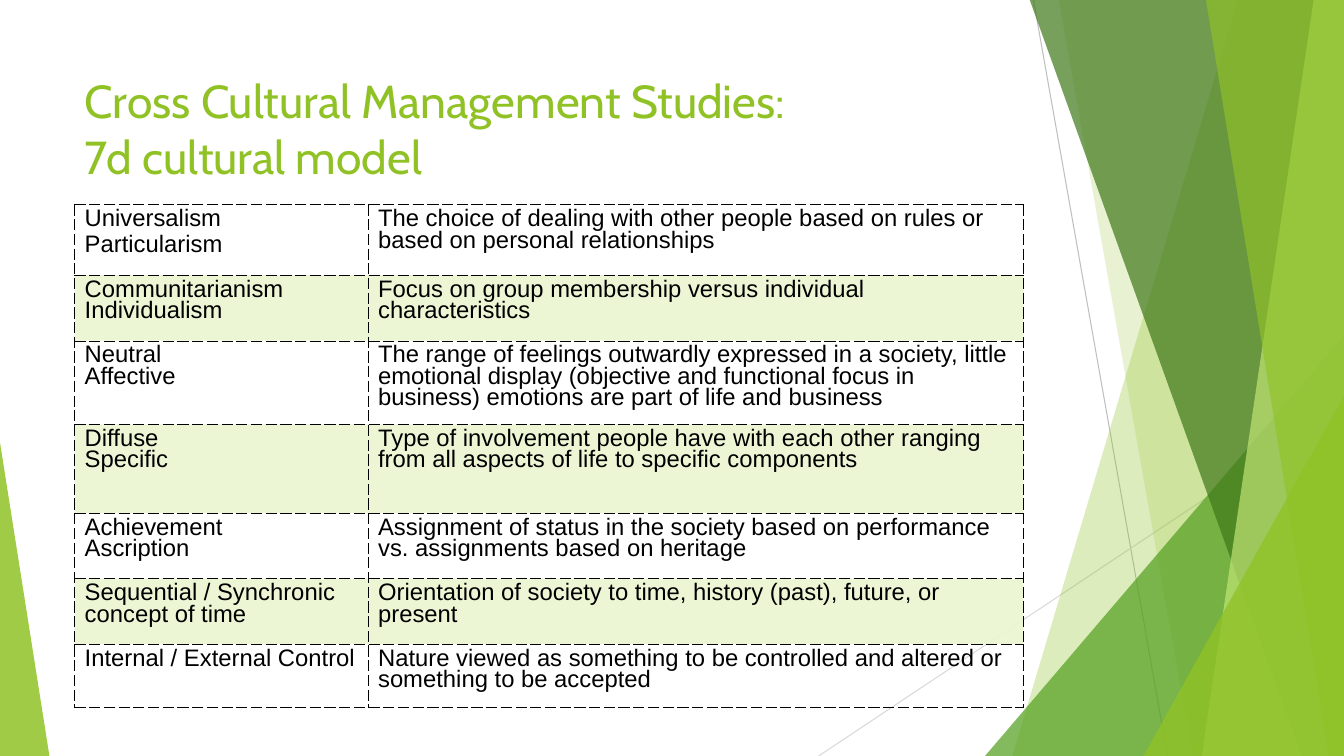
from dataclasses import dataclass

from lxml.etree import SubElement
from pptx import Presentation
from pptx.dml.color import RGBColor
from pptx.dml.fill import FillFormat
from pptx.enum.shapes import MSO_CONNECTOR, MSO_SHAPE
from pptx.enum.text import MSO_ANCHOR, PP_ALIGN
from pptx.oxml import parse_xml
from pptx.oxml.ns import nsdecls, qn
from pptx.oxml.xmlchemy import BaseOxmlElement
from pptx.slide import Slide
from pptx.table import _Cell
from pptx.util import Inches, Pt


@dataclass(frozen=True)
class Theme:
    lime: str = "90C226"
    green: str = "54A021"
    forest: str = "3F7819"
    pale_lime: str = "C0E474"
    band: str = "EAF6D1"
    ink: str = "000000"
    title_font: str = "Cabin"
    body_font: str = "Arial"
    title_size: float = 33
    body_size: float = 17


@dataclass(frozen=True)
class Ray:
    start: tuple[float, float]
    end: tuple[float, float]
    color: str


@dataclass(frozen=True)
class Shard:
    top_left: float
    bottom_left: float
    color: str
    opacity: int


@dataclass(frozen=True)
class Wedge:
    left: float
    top: float
    width: float
    apex: float
    color: str
    opacity: int


@dataclass(frozen=True)
class Dimension:
    names: tuple[str, ...]
    meaning: str
    height: float
    name_gap: float = 0


THEME = Theme()
WIDTH, HEIGHT = 13.33, 7.5
SHARD_TOP = -0.01
LEFT, CONTENT_WIDTH = 0.74, 9.4
TITLE_LINES = ("Cross Cultural Management Studies:", "7d cultural model")

RAYS = (
    Ray((10.25, 0), (11.58, HEIGHT), "BFBFBF"),
    Ray((WIDTH, 4.03), (8.12, HEIGHT), "D9D9D9"),
)
FACETS = (
    Shard(12.28, 10.04, THEME.lime, 30),
    Shard(10.5, 11.83, THEME.lime, 20),
    Wedge(9.77, 3.33, 3.56, 1, THEME.green, 72),
    Shard(10.21, 12.91, THEME.forest, 70),
    Shard(13.03, 11.92, THEME.pale_lime, 70),
    Shard(11.96, 13.18, THEME.lime, 65),
    Wedge(11.34, 3.93, 1.99, 1, THEME.lime, 80),
    Wedge(0, 4.39, 0.49, 0, THEME.lime, 85),
)
DIMENSIONS = (
    Dimension(("Universalism", "Particularism"),
              "The choice of dealing with other people based on rules or based on "
              "personal relationships", 0.7, 3.4),
    Dimension(("Communitarianism", "Individualism"),
              "Focus on group membership versus individual characteristics", 0.65),
    Dimension(("Neutral", "Affective"),
              "The range of feelings outwardly expressed in a society, little emotional "
              "display (objective and functional focus in business) emotions are part of "
              "life and business", 0.83),
    Dimension(("Diffuse", "Specific"),
              "Type of involvement people have with each other ranging from all aspects "
              "of life to specific components", 0.88),
    Dimension(("Achievement", "Ascription"),
              "Assignment of status in the society based on performance vs. assignments "
              "based on heritage", 0.65),
    Dimension(("Sequential / Synchronic concept of time",),
              "Orientation of society to time, history (past), future, or present", 0.65),
    Dimension(("Internal / External Control",),
              "Nature viewed as something to be controlled and altered or something to "
              "be accepted", 0.63),
)


def fill_translucent(fill: FillFormat, owner: BaseOxmlElement, color: str, opacity: int) -> None:
    fill.solid()
    fill.fore_color.rgb = RGBColor.from_string(color)
    tint = owner.find(qn("a:solidFill")).find(qn("a:srgbClr"))
    SubElement(tint, qn("a:alpha")).set("val", str(opacity * 1000))


def draw_ray(slide: Slide, ray: Ray) -> None:
    ends = [Inches(value) for value in ray.start + ray.end]
    line = slide.shapes.add_connector(MSO_CONNECTOR.STRAIGHT, *ends)
    line.line.color.rgb = RGBColor.from_string(ray.color)
    line.line.width = Pt(0.75)
    SubElement(line._element.spPr, qn("a:effectLst"))


def draw_facet(slide: Slide, facet: Shard | Wedge) -> None:
    if isinstance(facet, Shard):
        outline = slide.shapes.build_freeform(Inches(facet.top_left), Inches(SHARD_TOP))
        corners = ((WIDTH, SHARD_TOP), (WIDTH, HEIGHT), (facet.bottom_left, HEIGHT))
        outline.add_line_segments([(Inches(x), Inches(y)) for x, y in corners])
        shape = outline.convert_to_shape()
    else:
        shape = slide.shapes.add_shape(
            MSO_SHAPE.ISOSCELES_TRIANGLE, Inches(facet.left), Inches(facet.top),
            Inches(facet.width), Inches(HEIGHT - facet.top))
        shape.adjustments[0] = facet.apex
    fill_translucent(shape.fill, shape._element.spPr, facet.color, facet.opacity)
    shape.line.fill.background()
    shape.shadow.inherit = False


def write_title(slide: Slide) -> None:
    title = slide.shapes.title
    title.left, title.top = Inches(LEFT), Inches(0.67)
    title.width, title.height = Inches(CONTENT_WIDTH), Inches(1.44)
    frame = title.text_frame
    frame.word_wrap = True
    frame.vertical_anchor = MSO_ANCHOR.TOP
    heading = frame.paragraphs[0]
    heading.alignment = PP_ALIGN.LEFT
    heading.line_spacing = 1.0
    heading.font.name = THEME.title_font
    heading.font.size = Pt(THEME.title_size)
    heading.font.color.rgb = RGBColor.from_string(THEME.lime)
    first, second = TITLE_LINES
    heading.add_run().text = first
    heading.add_line_break()
    heading.add_run().text = second


def dash_borders(cell: _Cell) -> None:
    for position, side in enumerate(("lnL", "lnR", "lnT", "lnB")):
        border = parse_xml(
            f'<a:{side} {nsdecls("a")} w="{Pt(0.25)}"><a:solidFill>'
            f'<a:srgbClr val="{THEME.ink}"/></a:solidFill>'
            f'<a:prstDash val="sysDash"/></a:{side}>')
        cell._tc.get_or_add_tcPr().insert(position, border)


def write_cell(cell: _Cell, lines: tuple[str, ...], banded: bool, gap: float = 0) -> None:
    if banded:
        fill_translucent(cell.fill, cell._tc.get_or_add_tcPr(), THEME.band, 90)
    else:
        cell.fill.background()
    dash_borders(cell)
    frame = cell.text_frame
    for index, line in enumerate(lines):
        paragraph = frame.add_paragraph() if index else frame.paragraphs[0]
        paragraph.text = line
        paragraph.line_spacing = 0.8
        paragraph.space_before = Pt(gap if index else 0)
        paragraph.font.name = THEME.body_font
        paragraph.font.size = Pt(THEME.body_size)
        paragraph.font.color.rgb = RGBColor.from_string(THEME.ink)


def draw_model(slide: Slide) -> None:
    total_height = sum(dimension.height for dimension in DIMENSIONS)
    table = slide.shapes.add_table(
        len(DIMENSIONS), 2, Inches(LEFT), Inches(2.03),
        Inches(CONTENT_WIDTH), Inches(total_height)).table
    table.first_row = table.horz_banding = False
    names_column, meanings_column = table.columns
    names_column.width, meanings_column.width = Inches(2.91), Inches(6.5)
    for index, dimension in enumerate(DIMENSIONS):
        table.rows[index].height = Inches(dimension.height)
        banded = index % 2 == 1
        write_cell(table.cell(index, 0), dimension.names, banded, dimension.name_gap)
        write_cell(table.cell(index, 1), (dimension.meaning,), banded)


def main() -> None:
    deck = Presentation()
    deck.slide_width, deck.slide_height = Inches(WIDTH), Inches(HEIGHT)
    slide = deck.slides.add_slide(deck.slide_layouts.get_by_name("Title Only"))
    for ray in RAYS:
        draw_ray(slide, ray)
    for facet in FACETS:
        draw_facet(slide, facet)
    write_title(slide)
    draw_model(slide)
    deck.save("out.pptx")


if __name__ == "__main__":
    main()
